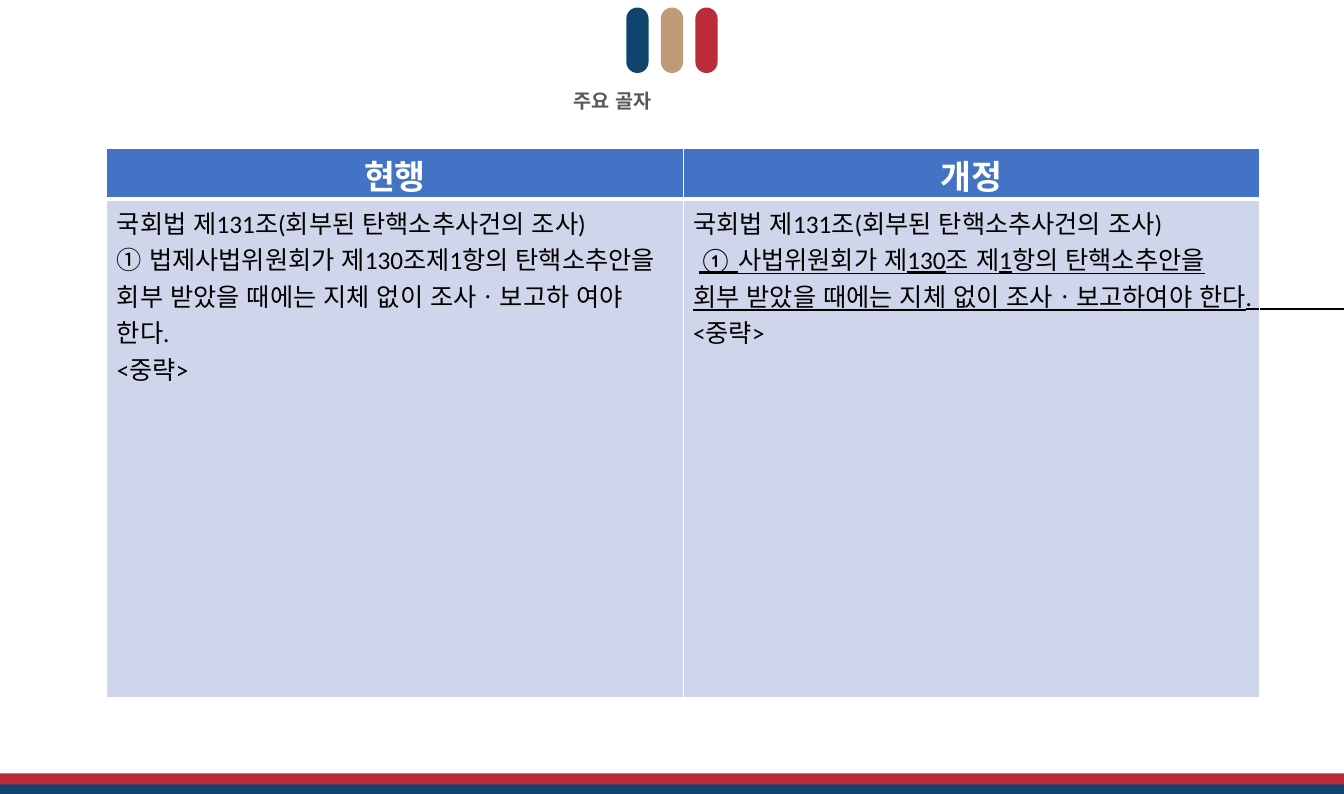
from dataclasses import dataclass

from lxml.etree import SubElement
from pptx import Presentation
from pptx.dml.color import RGBColor
from pptx.enum.lang import MSO_LANGUAGE_ID as Lang
from pptx.enum.shapes import MSO_SHAPE as Preset
from pptx.enum.text import PP_ALIGN as Align
from pptx.oxml.ns import qn
from pptx.slide import Slide
from pptx.table import _Cell as Cell
from pptx.text.text import _Paragraph as Paragraph
from pptx.util import Cm, Pt


@dataclass(frozen=True)
class Theme:
    navy: str = "11446C"
    tan: str = "C19A76"
    red: str = "BB2B38"
    white: str = "FFFFFF"
    black: str = "000000"
    grey: str = "595959"
    header_blue: str = "4472C4"
    body_blue: str = "CFD5EA"
    title_font: str = "Noto Sans CJK KR"
    table_font: str = "Calibri"
    title_size: int = 14
    header_size: int = 24
    body_size: int = 18
    thin_line: int = 1
    thick_line: int = 3


@dataclass(frozen=True)
class Block:
    left: float
    top: float
    width: float
    height: float
    color: str
    preset: Preset = Preset.RECTANGLE


@dataclass(frozen=True)
class Phrase:
    text: str
    underline: bool = False


@dataclass(frozen=True)
class Version:
    heading: str
    article: list[list[Phrase]]


THEME = Theme()
SLIDE_WIDTH, SLIDE_HEIGHT = 33.86, 20.0
PILL_LEFT, PILL_STEP = 15.78, 0.87
STRIPE_HEIGHT = 0.28
HARD_SPACE = chr(160)

PILLS = [
    Block(PILL_LEFT + i * PILL_STEP, 0.19, 0.56, 1.65, color, Preset.ROUNDED_RECTANGLE)
    for i, color in enumerate((THEME.navy, THEME.tan, THEME.red))
]
STRIPES = [
    Block(0, top, SLIDE_WIDTH, STRIPE_HEIGHT, color)
    for top, color in ((19.75, THEME.navy), (19.48, THEME.red))
]
TITLE = Block(14.2, 2.11, 5.46, 0.86, THEME.white)

TITLE_FORMAT = {"name": THEME.title_font, "size": Pt(THEME.title_size), "bold": True}
HEADER_FORMAT = {"name": THEME.table_font, "size": Pt(THEME.header_size), "bold": True}
BODY_FORMAT = {"name": THEME.table_font, "size": Pt(THEME.body_size), "bold": False}
HEADER_MARGINS = {"margin_top": Cm(0.05), "margin_bottom": Cm(0)}

OMITTED = [Phrase("<중략>")]
VERSIONS = [
    Version("현행", [
        [Phrase("국회법 제131조(회부된 탄핵소추사건의 조사)")],
        [Phrase("① 법제사법위원회가 제130조제1항의 탄핵소추안을 회부 받았을 때에는 "
                "지체 없이 조사ㆍ보고하 여야 한다.")],
        OMITTED,
    ]),
    Version("개정", [
        [Phrase(f"국회법 제131조(회부된 탄핵소추사건의 조사) {HARD_SPACE}"),
         Phrase(f"①{HARD_SPACE}사법위원회가{HARD_SPACE}제130조 제1항의 탄핵소추안을 "
                "회부 받았을 때에는 지체 없이 조사ㆍ보고하여야 한다.", underline=True)],
        OMITTED,
    ]),
]


def add_block(slide: Slide, block: Block):
    """Draw a plain filled shape without outline."""
    shape = slide.shapes.add_shape(
        block.preset, Cm(block.left), Cm(block.top), Cm(block.width), Cm(block.height))
    shape.shadow.inherit = False
    shape.fill.solid()
    shape.fill.fore_color.rgb = RGBColor.from_string(block.color)
    shape.line.fill.background()
    if block.preset == Preset.ROUNDED_RECTANGLE:
        shape.adjustments[0] = 0.5
    return shape


def add_phrase(paragraph: Paragraph, phrase: Phrase, font_format: dict, color: str) -> None:
    run = paragraph.add_run()
    run.text = phrase.text
    values = {**font_format, "underline": phrase.underline, "language_id": Lang.KOREAN}
    for attribute, value in values.items():
        setattr(run.font, attribute, value)
    run.font.color.rgb = RGBColor.from_string(color)


def style_cell(cell: Cell, fill: str, edges: dict[str, int]) -> None:
    """Give a cell its white borders, then its fill."""
    properties = cell._tc.get_or_add_tcPr()
    for edge, points in edges.items():
        border = SubElement(properties, qn(f"a:{edge}"), w=str(Pt(points)))
        SubElement(SubElement(border, qn("a:solidFill")), qn("a:srgbClr"), val=THEME.white)
    cell.fill.solid()
    cell.fill.fore_color.rgb = RGBColor.from_string(fill)


def add_comparison(slide: Slide, versions: list[Version]) -> None:
    column_width, row_heights = 14.52, (0.86, 12.57)
    comparison = slide.shapes.add_table(
        len(row_heights), len(versions), Cm(2.69), Cm(3.73),
        Cm(column_width * len(versions)), Cm(sum(row_heights))).table
    for row, height in zip(comparison.rows, row_heights):
        row.height = Cm(height)

    thin, thick = THEME.thin_line, THEME.thick_line
    header_edges = {"lnL": thin, "lnR": thin, "lnT": thin, "lnB": thick}
    body_edges = {"lnL": thin, "lnR": thin, "lnT": thick, "lnB": thin}
    for column, version in enumerate(versions):
        comparison.columns[column].width = Cm(column_width)

        header = comparison.cell(0, column)
        style_cell(header, THEME.header_blue, header_edges)
        for attribute, margin in HEADER_MARGINS.items():
            setattr(header, attribute, margin)
        heading = header.text_frame.paragraphs[0]
        heading.alignment = Align.CENTER
        add_phrase(heading, Phrase(version.heading), HEADER_FORMAT, THEME.white)

        body = comparison.cell(1, column)
        style_cell(body, THEME.body_blue, body_edges)
        for i, phrases in enumerate(version.article):
            frame = body.text_frame
            paragraph = frame.add_paragraph() if i else frame.paragraphs[0]
            for phrase in phrases:
                add_phrase(paragraph, phrase, BODY_FORMAT, THEME.black)


def main() -> None:
    deck = Presentation()
    deck.slide_width, deck.slide_height = Cm(SLIDE_WIDTH), Cm(SLIDE_HEIGHT)
    slide = deck.slides.add_slide(deck.slide_layouts[6])

    # Three pills above the title
    for pill in PILLS:
        add_block(slide, pill)

    # Title
    title = add_block(slide, TITLE).text_frame
    title.word_wrap = True
    title.paragraphs[0].alignment = Align.JUSTIFY
    add_phrase(title.paragraphs[0], Phrase("주요 골자"), TITLE_FORMAT, THEME.grey)

    # Stripes along the foot
    for stripe in STRIPES:
        add_block(slide, stripe)

    # Current and revised article side by side
    add_comparison(slide, VERSIONS)

    deck.save("out.pptx")


if __name__ == "__main__":
    main()
